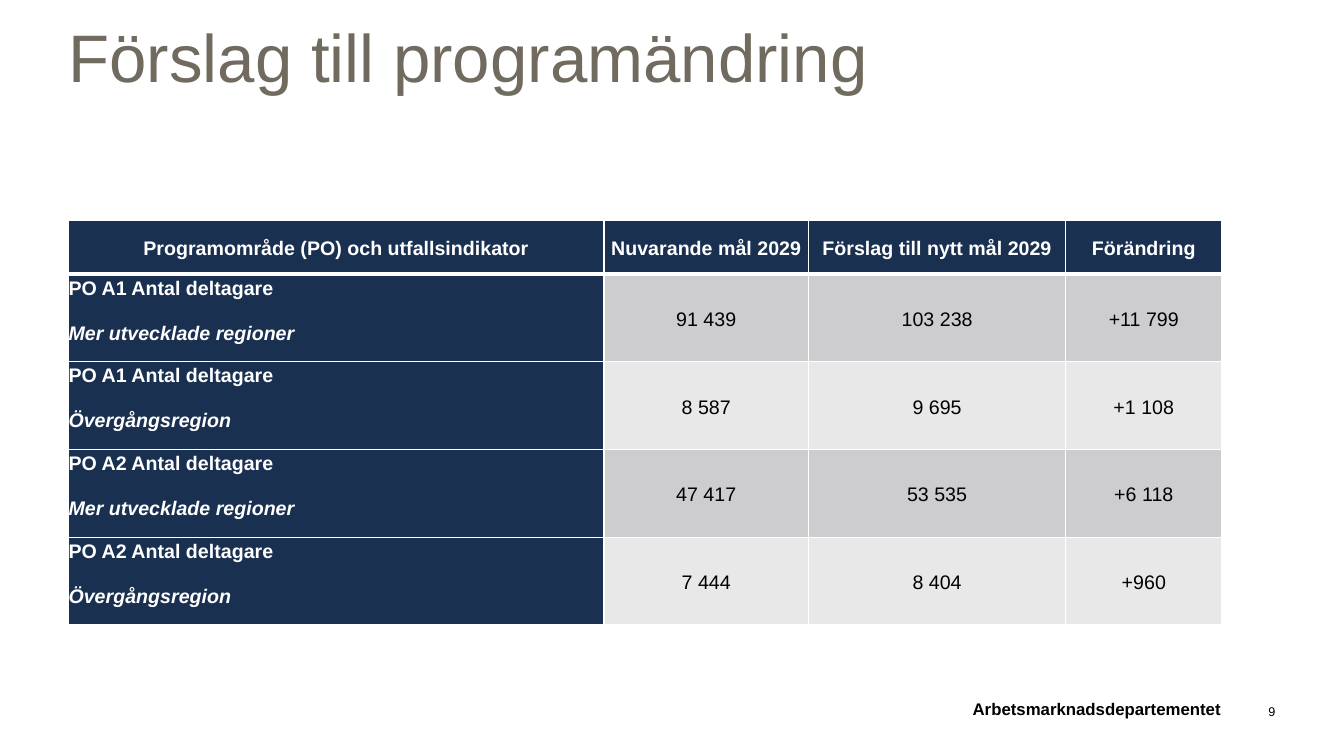
"""Build the slide with proposed programme targets."""
from dataclasses import dataclass

from lxml import etree
from pptx import Presentation
from pptx.dml.color import RGBColor
from pptx.enum.text import MSO_ANCHOR, PP_ALIGN
from pptx.oxml.ns import qn
from pptx.util import Inches, Pt

LEFT, CENTER, RIGHT = PP_ALIGN.LEFT, PP_ALIGN.CENTER, PP_ALIGN.RIGHT
TOP, MIDDLE, BOTTOM = MSO_ANCHOR.TOP, MSO_ANCHOR.MIDDLE, MSO_ANCHOR.BOTTOM

TITLE = "Förslag till programändring"
HEADINGS = [
    "Programområde (PO) och utfallsindikator",
    "Nuvarande mål 2029",
    "Förslag till nytt mål 2029",
    "Förändring",
]
INDICATORS = [
    ("PO A1 Antal deltagare", "Mer utvecklade regioner", ["91 439", "103 238", "+11 799"]),
    ("PO A1 Antal deltagare", "Övergångsregion", ["8 587", "9 695", "+1 108"]),
    ("PO A2 Antal deltagare", "Mer utvecklade regioner", ["47 417", "53 535", "+6 118"]),
    ("PO A2 Antal deltagare", "Övergångsregion", ["7 444", "8 404", "+960"]),
]
DEPARTMENT = "Arbetsmarknadsdepartementet"
PAGE_NUMBER = "9"

MARGIN = 0.68
TABLE_TOP = 2.19
COLUMN_WIDTHS = [5.31, 2.03, 2.55, 1.55]
HEADING_HEIGHT, INDICATOR_HEIGHT = 0.53, 0.87
FOOTER_TOP, FOOTER_HEIGHT = 6.89, 0.24


@dataclass(frozen=True)
class Theme:
    """Colours, type sizes and line widths."""
    font: str = "Arial"
    title: str = "716B5F"
    navy: str = "1A3050"
    white: str = "FFFFFF"
    black: str = "000000"
    bands: tuple = ("CDCDD0", "E8E8E9")
    title_size: int = 48
    table_size: int = 14
    department_size: int = 12
    page_size: int = 9
    rule: int = 1
    heading_rule: int = 3


THEME = Theme()


def add_run(paragraph, text, size, color, bold=False, italic=False):
    """Add one formatted run."""
    run = paragraph.add_run()
    run.text = text
    run.font.name = THEME.font
    run.font.size = Pt(size)
    run.font.bold = bold
    run.font.italic = italic
    run.font.color.rgb = RGBColor.from_string(color)


def set_border(cell, side, width):
    """Draw one white border of a cell."""
    line = etree.SubElement(cell._tc.get_or_add_tcPr(), qn(f"a:ln{side}"), w=str(Pt(width)))
    fill = etree.SubElement(line, qn("a:solidFill"))
    etree.SubElement(fill, qn("a:srgbClr"), val=THEME.white)


def fill_cell(cell, lines, fill, color, align, anchor, top_rule, bottom_rule):
    """Write lines of (text, bold, italic) in a cell and style it."""
    cell.margin_left = cell.margin_right = cell.margin_top = cell.margin_bottom = 0
    cell.vertical_anchor = anchor
    rules = {"L": THEME.rule, "R": THEME.rule, "T": top_rule, "B": bottom_rule}
    for side, width in rules.items():
        set_border(cell, side, width)
    cell.fill.solid()
    cell.fill.fore_color.rgb = RGBColor.from_string(fill)
    frame = cell.text_frame
    for index, (text, bold, italic) in enumerate(lines):
        paragraph = frame.add_paragraph() if index else frame.paragraphs[0]
        paragraph.alignment = align
        paragraph.line_spacing = 1.15
        paragraph.space_after = Pt(14)
        add_run(paragraph, text, THEME.table_size, color, bold, italic)


def add_title(slide):
    """Place and write the title."""
    title = slide.shapes.title
    title.left, title.top = Inches(MARGIN), Inches(0.1)
    title.width, title.height = Inches(11.97), Inches(1.13)
    frame = title.text_frame
    frame.margin_left = frame.margin_right = 0
    frame.margin_top = frame.margin_bottom = Inches(0.05)
    frame.vertical_anchor = TOP
    frame.paragraphs[0].alignment = LEFT
    add_run(frame.paragraphs[0], TITLE, THEME.title_size, THEME.title)


def add_target_table(slide):
    """Add the table of current and proposed targets."""
    row_heights = [HEADING_HEIGHT] + [INDICATOR_HEIGHT] * len(INDICATORS)
    table = slide.shapes.add_table(
        len(row_heights), len(COLUMN_WIDTHS), Inches(MARGIN), Inches(TABLE_TOP),
        Inches(sum(COLUMN_WIDTHS)), Inches(sum(row_heights))).table
    table.first_col = True
    for column, width in zip(table.columns, COLUMN_WIDTHS):
        column.width = Inches(width)
    for row, height in zip(table.rows, row_heights):
        row.height = Inches(height)

    for column, heading in enumerate(HEADINGS):
        fill_cell(table.cell(0, column), [(heading, True, False)], THEME.navy, THEME.white,
                  CENTER, MIDDLE, THEME.rule, THEME.heading_rule)
    for row, (indicator, region, targets) in enumerate(INDICATORS, 1):
        top_rule = THEME.heading_rule if row == 1 else THEME.rule
        band = THEME.bands[(row - 1) % len(THEME.bands)]
        fill_cell(table.cell(row, 0), [(indicator, True, False), (region, True, True)],
                  THEME.navy, THEME.white, LEFT, TOP, top_rule, THEME.rule)
        for column, target in enumerate(targets, 1):
            fill_cell(table.cell(row, column), [(target, False, False)], band, THEME.black,
                      CENTER, MIDDLE, top_rule, THEME.rule)


def add_footer(slide, text, left, width, size, bold):
    """Add one right-aligned footer text."""
    frame = slide.shapes.add_textbox(Inches(left), Inches(FOOTER_TOP), Inches(width),
                                     Inches(FOOTER_HEIGHT)).text_frame
    frame.word_wrap = True
    frame.margin_left = frame.margin_right = frame.margin_top = frame.margin_bottom = 0
    frame.vertical_anchor = BOTTOM
    paragraph = frame.paragraphs[0]
    paragraph.alignment = RIGHT
    paragraph.space_after = Pt(6)
    add_run(paragraph, text, size, THEME.black, bold)


def main():
    """Build and save the presentation."""
    presentation = Presentation()
    presentation.slide_width, presentation.slide_height = Inches(13.33), Inches(7.5)
    slide = presentation.slides.add_slide(presentation.slide_layouts[5])
    add_title(slide)
    add_footer(slide, DEPARTMENT, 3.29, 8.82, THEME.department_size, True)
    add_footer(slide, PAGE_NUMBER, 12.12, 0.53, THEME.page_size, False)
    add_target_table(slide)
    presentation.save("out.pptx")


if __name__ == "__main__":
    main()
